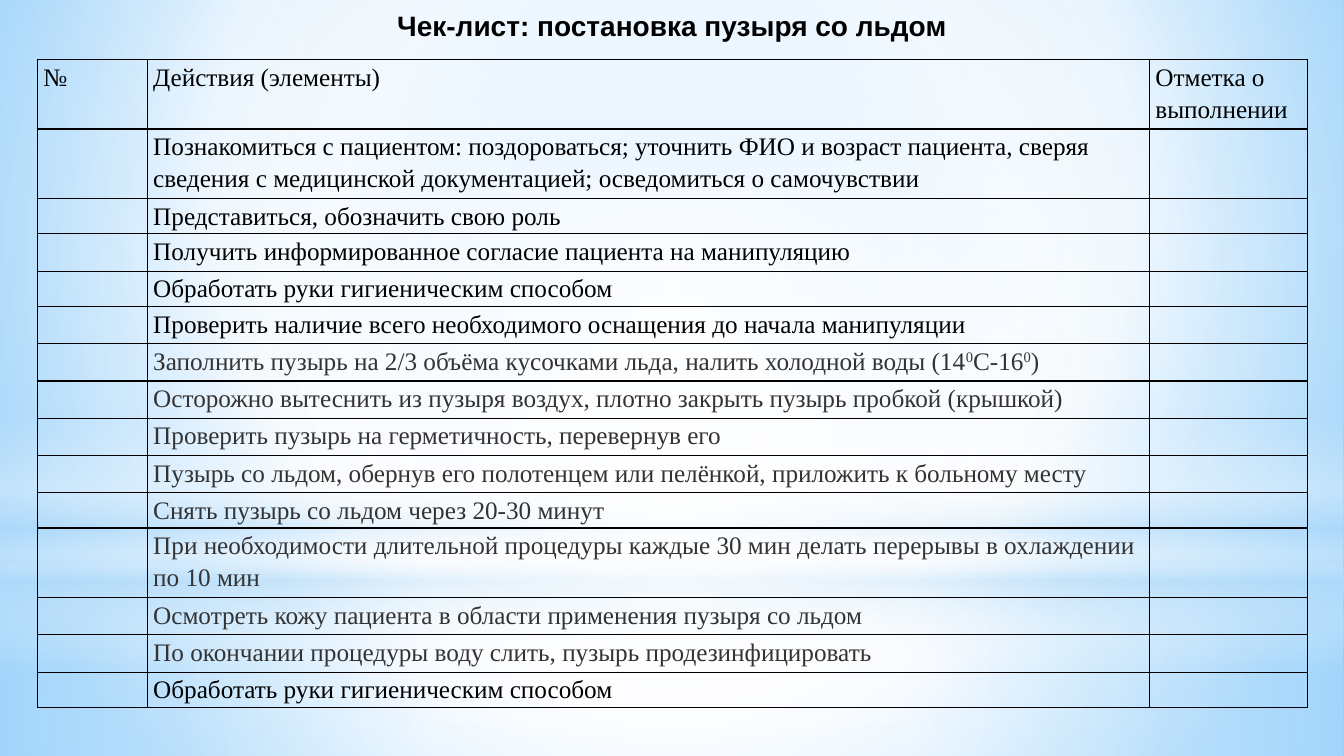
from lxml import etree
from pptx import Presentation
from pptx import util as u
from pptx.dml.color import RGBColor
from pptx.enum import shapes, text
from pptx.oxml.ns import qn

COLORS = {"black": "000000", "grey": "333333", "white": "FFFFFF",
          "pale": "B4DCFA", "sky": "9ED5FF", "blue": "5BB9FF"}
CENTRE = (50, 50, 50, 50)

HEADER = ["№", "Действия (элементы)", "Отметка о выполнении"]
COLUMNS = [1.09, 9.94, 1.57]
ONE, TALL, TWO = 0.35, 0.37, 0.69
# Row height, text colour, action; "^" separates superscript parts
ACTIONS = [
    (TWO, "black", "Познакомиться с пациентом: поздороваться; уточнить ФИО и возраст пациента, "
                   "сверяя сведения с медицинской документацией; осведомиться о самочувствии"),
    (ONE, "black", "Представиться, обозначить свою роль"),
    (TALL, "black", "Получить информированное согласие пациента на манипуляцию"),
    (ONE, "black", "Обработать руки гигиеническим способом"),
    (TALL, "black", "Проверить наличие всего необходимого оснащения до начала манипуляции"),
    (TALL, "grey", "Заполнить пузырь на 2/3 объёма кусочками льда, налить холодной воды "
                   "(14^0^С-16^0^)"),
    (TALL, "grey", "Осторожно вытеснить из пузыря воздух, плотно закрыть пузырь пробкой (крышкой)"),
    (TALL, "grey", "Проверить пузырь на герметичность, перевернув его"),
    (TALL, "grey", "Пузырь со льдом, обернув его полотенцем или пелёнкой, приложить к больному месту"),
    (ONE, "grey", "Снять пузырь со льдом через 20-30 минут"),
    (TWO, "grey", "При необходимости длительной процедуры каждые 30 мин делать перерывы "
                  "в охлаждении по 10 мин"),
    (TALL, "grey", "Осмотреть кожу пациента в области применения пузыря со льдом"),
    (TALL, "grey", "По окончании процедуры воду слить, пузырь продезинфицировать"),
    (ONE, "black", "Обработать руки гигиеническим способом"),
]


def add(parent, tag, **attrs):
    return etree.SubElement(parent, qn(tag), {k: str(v) for k, v in attrs.items()})


def set_gradient(holder, fill, stops, centre=None):
    """Fill with (position, colour, opacity) stops: radial if centre is given, else downward."""
    fill.solid()
    solid = holder.find(".//" + qn("a:solidFill"))
    grad = etree.Element(qn("a:gradFill"), rotWithShape="1")
    stop_list = add(grad, "a:gsLst")
    for pos, color, opacity in stops:
        stop = add(stop_list, "a:gs", pos=pos * 1000)
        clr = add(stop, "a:srgbClr", val=COLORS[color])
        if opacity < 100:
            add(clr, "a:alpha", val=opacity * 1000)
    if centre:
        radial = add(grad, "a:path", path="circle")
        add(radial, "a:fillToRect", **{side: v * 1000 for side, v in zip("ltrb", centre)})
    else:
        add(grad, "a:lin", ang=5400000, scaled=0)
    solid.getparent().replace(solid, grad)


def add_backdrop(s, width):
    set_gradient(s._element, s.background.fill,
                 [(0, "sky", 100), (60, "white", 100), (100, "blue", 100)], (20, 10, 20, 60))
    rect, oval = shapes.MSO_SHAPE.RECTANGLE, shapes.MSO_SHAPE.OVAL
    glows = [
        (rect, 5.58, 1.92, [(0, "white", 91), (37, "white", 76), (100, "pale", 79)], CENTRE),
        (rect, 0, 5.58, [(0, "white", 89), (48, "white", 62), (100, "pale", 79)], CENTRE),
        (rect, 4.12, 2.5, [(0, "white", 0), (29, "white", 30), (45, "pale", 40),
                           (55, "white", 26), (65, "pale", 60), (100, "white", 0)], None),
        (oval, 1.75, 5.58, [(0, "white", 100), (56, "white", 0)], CENTRE),
    ]
    for kind, top, height, stops, centre in glows:
        sp = s.shapes.add_shape(kind, 0, u.Inches(top), width, u.Inches(height))
        sp.shadow.inherit = False
        sp.line.fill.background()
        set_gradient(sp._element, sp.fill, stops, centre)


def add_run(p, words, size, font, color):
    r = p.add_run()
    r.text = words
    r.font.size, r.font.name = u.Pt(size), font
    r.font.color.rgb = RGBColor.from_string(COLORS[color])
    return r


def add_title(s, left, top, width, height):
    title = s.shapes.title
    s.shapes._spTree.append(title._element)  # in front of the backdrop
    title.left, title.top, title.width, title.height = map(u.Inches, (left, top, width, height))
    tf = title.text_frame
    tf.word_wrap = False
    tf.auto_size = text.MSO_AUTO_SIZE.SHAPE_TO_FIT_TEXT
    tf.vertical_anchor = text.MSO_ANCHOR.MIDDLE
    p = tf.paragraphs[0]
    p.alignment = text.PP_ALIGN.CENTER
    add_run(p, "Чек-лист: постановка пузыря со льдом", 20, "Arial", "black").font.bold = True


def fill_cell(cell, words, color):
    cell.margin_left = cell.margin_right = u.Inches(0.06)
    cell.margin_top = cell.margin_bottom = 0
    p = cell.text_frame.paragraphs[0]
    p.line_spacing = 1.15
    if words:
        for i, part in enumerate(words.split("^")):
            r = add_run(p, part, 18, "Times New Roman", color)
            if i % 2:
                r.font._element.set("baseline", "30000")
    else:
        end = add(p._p, "a:endParaRPr", sz=1800)
        add(end, "a:latin", typeface="Times New Roman")
    tc_pr = cell._tc.get_or_add_tcPr()
    for side in "LRTB":
        border = add(tc_pr, "a:ln" + side, w=u.Pt(1))
        add(add(border, "a:solidFill"), "a:srgbClr", val=COLORS["black"])
    cell.fill.background()


def add_checklist(s, left, top):
    rows = [(TWO, "black", HEADER)] + [(h, c, ["", action, ""]) for h, c, action in ACTIONS]
    height = sum(row[0] for row in rows)
    table = s.shapes.add_table(len(rows), len(COLUMNS), u.Inches(left), u.Inches(top),
                               u.Inches(sum(COLUMNS)), u.Inches(height)).table
    table.first_row = table.horz_banding = False
    for column, width in zip(table.columns, COLUMNS):
        column.width = u.Inches(width)
    for row, (row_height, color, values) in zip(table.rows, rows):
        row.height = u.Inches(row_height)
        for cell, words in zip(row.cells, values):
            fill_cell(cell, words, color)


def main():
    prs = Presentation()
    prs.slide_width, prs.slide_height = u.Inches(13.33), u.Inches(7.5)
    s = prs.slides.add_slide(prs.slide_layouts[5])
    add_backdrop(s, prs.slide_width)
    add_title(s, 3.8, 0.03, 5.73, 0.44)
    add_checklist(s, 0.37, 0.59)
    prs.save("out.pptx")


if __name__ == "__main__":
    main()
